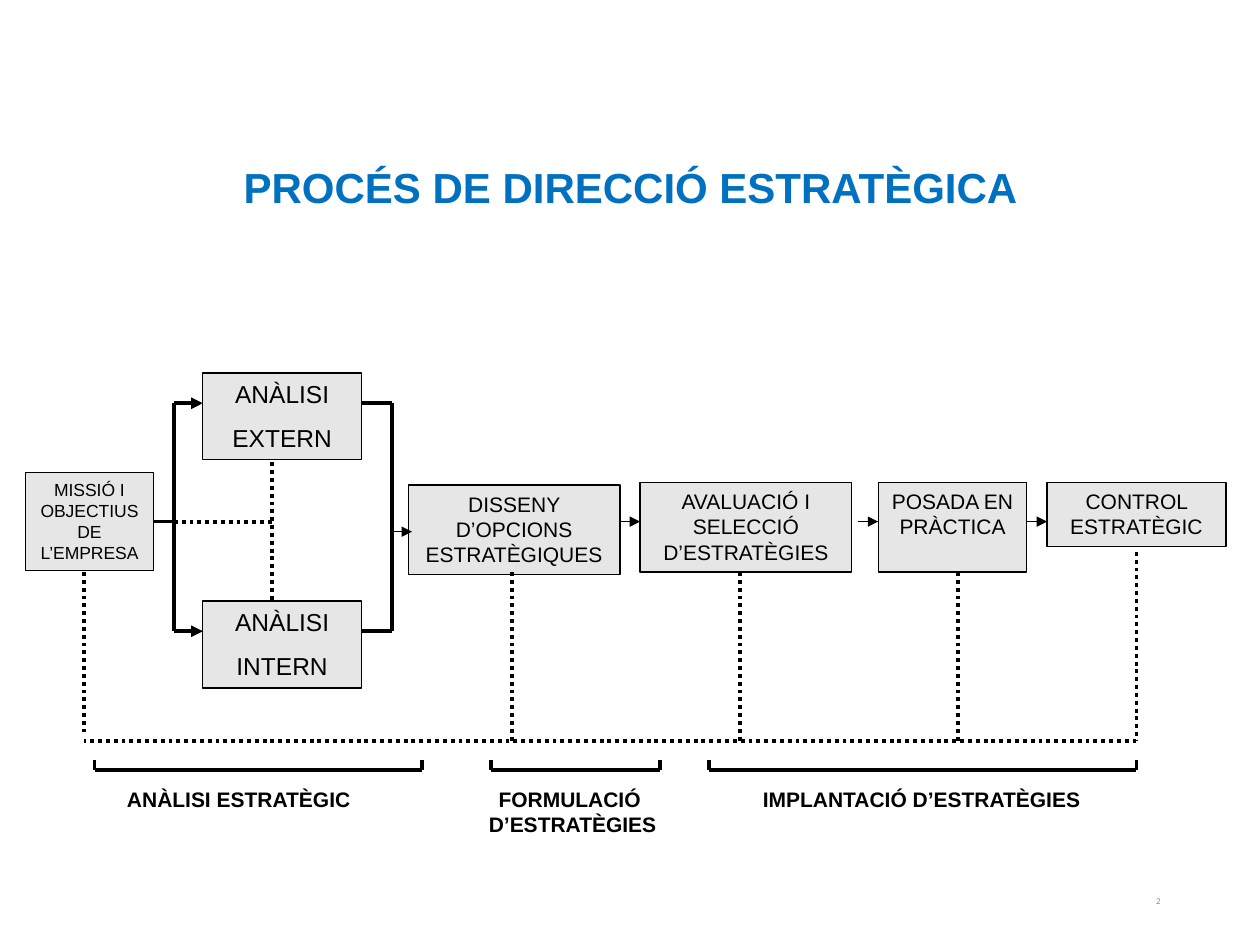
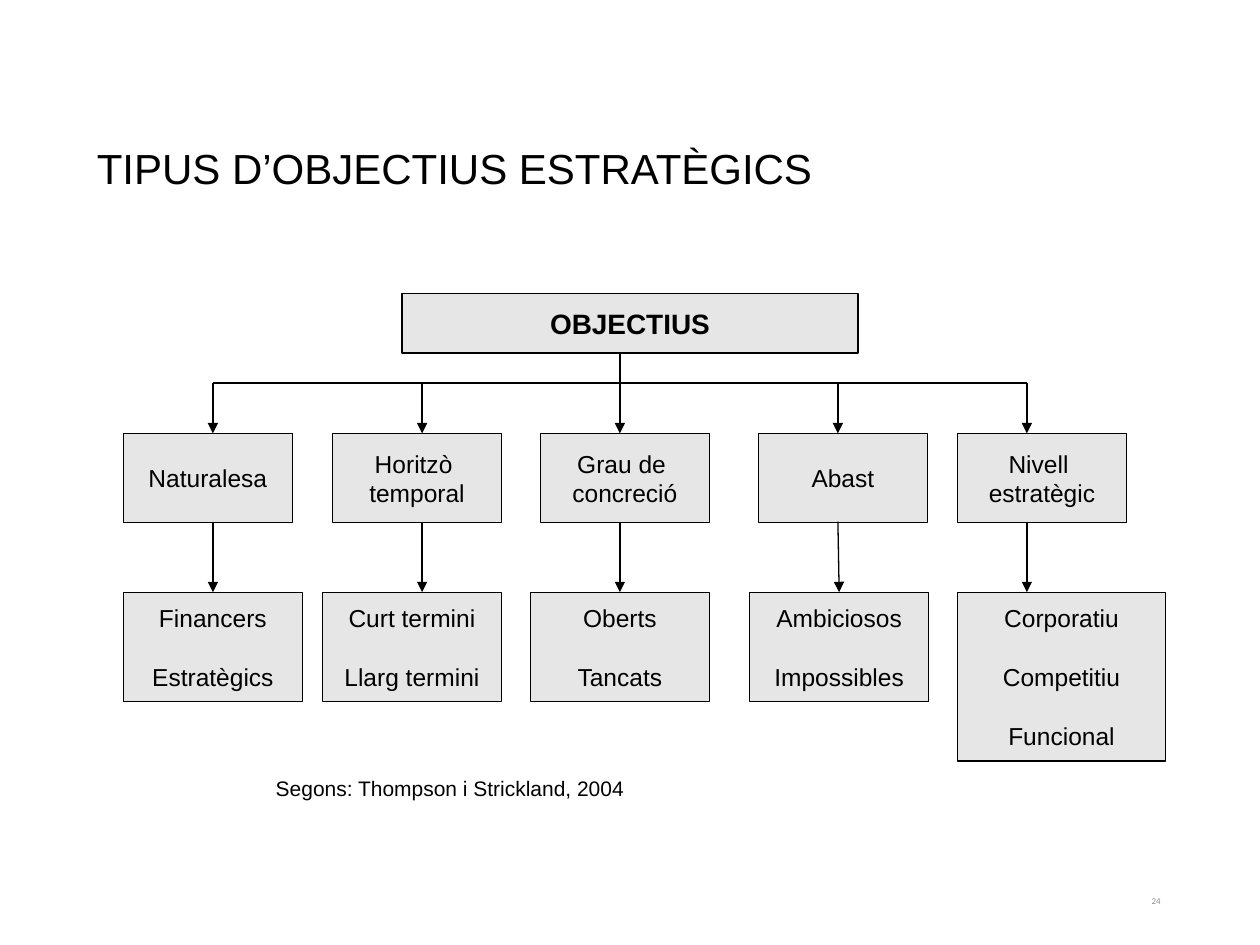
from pptx import Presentation
from pptx import util as u
from pptx.dml.color import RGBColor
from pptx.enum import dml, shapes, text
from pptx.oxml.ns import qn
from lxml import etree

BLACK = RGBColor(0x00, 0x00, 0x00)
BLUE = RGBColor(0x00, 0x70, 0xC0)
GRAY = RGBColor(0x8C, 0x8C, 0x8C)
BOX_FILL = RGBColor(0xE7, 0xE6, 0xE6)
LEFT, CENTER, RIGHT = text.PP_ALIGN.LEFT, text.PP_ALIGN.CENTER, text.PP_ALIGN.RIGHT
TOP, MIDDLE = text.MSO_ANCHOR.TOP, text.MSO_ANCHOR.MIDDLE
BOTTOM_SIDE, RIGHT_SIDE, TOP_SIDE = 2, 3, 0


def add_text(s, at, lines, size, border=None, color=BLACK, bold=False, align=CENTER,
             anchor=TOP, wrap=True, gap=0, font="Arial"):
    """Add a text box, or a filled rectangle when a border width is given."""
    at = [u.Inches(v) for v in at]
    if border is None:
        sp = s.shapes.add_textbox(*at)
    else:
        sp = s.shapes.add_shape(shapes.MSO_SHAPE.RECTANGLE, *at)
        sp.shadow.inherit = False
        sp.fill.solid()
        sp.fill.fore_color.rgb = BOX_FILL
        sp.line.color.rgb = BLACK
        sp.line.width = u.Pt(border)
    tf = sp.text_frame
    tf.text = "\n".join(lines)
    tf.word_wrap = wrap
    tf.vertical_anchor = anchor
    for i, p in enumerate(tf.paragraphs):
        p.alignment = align
        if i and gap:
            p.space_before = u.Pt(gap)
        for r in p.runs:
            r.font.name = font
            r.font.size = u.Pt(size)
            r.font.bold = bold
            r.font.color.rgb = color
    return sp


def add_line(s, x1, y1, x2, y2, width=0.75, dotted=False, arrow=False):
    ends = [u.Inches(v) for v in (x1, y1, x2, y2)]
    c = s.shapes.add_connector(shapes.MSO_CONNECTOR.STRAIGHT, *ends)
    c.line.color.rgb = BLACK
    c.line.width = u.Pt(width)
    if dotted:
        c.line.dash_style = dml.MSO_LINE.ROUND_DOT
    if arrow:
        etree.SubElement(c.line._get_or_add_ln(), qn("a:tailEnd"), type="triangle")
    etree.SubElement(c._element.spPr, qn("a:effectLst"))
    return c


prs = Presentation()
prs.slide_width, prs.slide_height = u.Inches(10), u.Inches(7.5)

# Slides with their title and number
slides = []
for title, x, y, color, bold, align, number in [
    ("PROCÉS DE DIRECCIÓ ESTRATÈGICA", 0.83, 1.23, BLUE, True, CENTER, "2"),
    ("TIPUS D’OBJECTIUS ESTRATÈGICS", 0.67, 1.08, BLACK, False, LEFT, "24"),
]:
    s = prs.slides.add_slide(prs.slide_layouts[6])
    add_text(s, (x, y, 8.35, 0.5), [title], 24, color=color, bold=bold, align=align)
    add_text(s, (7.06, 6.95, 2.25, 0.4), [number], 5.1, color=GRAY, align=RIGHT,
             anchor=MIDDLE, font="Calibri")
    slides.append(s)
process, objectives = slides

# Process: the steps
for y, kind in [(2.96, "EXTERN"), (4.77, "INTERN")]:
    add_text(process, (1.61, y, 1.26, 0.69), ["ANÀLISI", kind], 14, border=0.75, gap=8)
mission = add_text(process, (0.2, 3.75, 1.02, 0.78), ["MISSIÓ I OBJECTIUS DE L’EMPRESA"],
                   10, border=0.75)
for at, lines in [
    ((3.24, 3.85, 1.68, 0.71), ["DISSENY D’OPCIONS", "ESTRATÈGIQUES"]),
    ((5.08, 3.83, 1.68, 0.71), ["AVALUACIÓ I SELECCIÓ D’ESTRATÈGIES"]),
    ((6.97, 3.83, 1.18, 0.71), ["POSADA EN PRÀCTICA"]),
    ((8.31, 3.83, 1.42, 0.51), ["CONTROL ESTRATÈGIC"]),
]:
    add_text(process, at, lines, 12, border=0.75)

# Process: links around the two analyses
FLOW_Y = 4.14
add_line(process, 1.22, FLOW_Y, 1.38, FLOW_Y, 1.5).begin_connect(mission, RIGHT_SIDE)
add_line(process, 1.38, FLOW_Y, 2.16, FLOW_Y, 2.25, dotted=True)
add_line(process, 2.16, 3.67, 2.16, 4.77, 2.25, dotted=True)
for x in (1.38, 3.11):
    add_line(process, x, 3.2, x, 5.01, 2.25)
for y in (3.2, 5.01):
    add_line(process, 1.38, y, 1.61, y, 2.25, arrow=True)
    add_line(process, 2.87, y, 3.11, y, 2.25)

# Process: arrows from step to step
for x, y in [(3.11, 4.22), (4.92, FLOW_Y), (6.81, FLOW_Y), (8.15, FLOW_Y)]:
    add_line(process, x, y, x + 0.16, y, arrow=True)

# Process: dotted feedback loop
FEEDBACK_Y = 5.88
for x, top, bottom in [(0.67, 4.54, 5.81), (4.06, 4.54, FEEDBACK_Y), (5.87, 4.54, FEEDBACK_Y),
                       (7.6, 4.54, FEEDBACK_Y), (9.02, 4.38, FEEDBACK_Y)]:
    add_line(process, x, top, x, bottom, 2.25, dotted=True)
add_line(process, 9.02, FEEDBACK_Y, 0.67, FEEDBACK_Y, 2.25, dotted=True)

# Process: phase brackets and their names
for x1, x2, at, lines, wrap in [
    (0.75, 3.35, (0.9, 6.19, 1.99, 0.3), ["ANÀLISI ESTRATÈGIC"], False),
    (3.9, 5.24, (3.66, 6.19, 1.77, 0.5), ["FORMULACIÓ ", "D’ESTRATÈGIES"], True),
    (5.63, 9.02, (5.94, 6.19, 2.75, 0.3), ["IMPLANTACIÓ D’ESTRATÈGIES"], False),
]:
    add_line(process, x1, 6.11, x2, 6.11, 2.25)
    for x in (x1, x2):
        add_line(process, x, 6.03, x, 6.11, 2.25)
    add_text(process, at, lines, 12, bold=True, wrap=wrap)

# Objectives: root and trunk
add_text(objectives, (3.19, 2.33, 3.62, 0.47), ["OBJECTIUS"], 16, border=1, bold=True,
         anchor=MIDDLE, wrap=False)
add_line(objectives, 1.69, 3.04, 8.15, 3.04)
add_line(objectives, 4.92, 2.81, 4.92, 3.04)

# Objectives: one branch per criterion
for arrow_x, x, criterion, types_x, types_w, types_h, kinds in [
    (1.69, 0.98, ["Naturalesa"], 0.98, 1.42, 0.87, ["Financers", "Estratègics"]),
    (3.35, 2.64, ["Horitzò ", "temporal"], 2.56, 1.42, 0.87, ["Curt termini", "Llarg termini"]),
    (4.92, 4.29, ["Grau de ", "concreció"], 4.21, 1.42, 0.87, ["Oberts", "Tancats"]),
    (6.65, 6.02, ["Abast"], 5.95, 1.42, 0.87, ["Ambiciosos", "Impossibles"]),
    (8.15, 7.6, ["Nivell ", "estratègic"], 7.6, 1.65, 1.34,
     ["Corporatiu", "Competitiu", "Funcional"]),
]:
    add_text(objectives, (x, 3.44, 1.34, 0.71), criterion, 14, border=0.75,
             anchor=MIDDLE, wrap=False)
    sp = add_text(objectives, (types_x, 4.7, types_w, types_h), kinds, 14, border=0.75,
                  anchor=MIDDLE, wrap=False, gap=17)
    add_line(objectives, arrow_x, 3.04, arrow_x, 3.44, arrow=True)
    c = add_line(objectives, arrow_x, 4.14, arrow_x, 4.7, arrow=True)
    if abs(types_x + types_w / 2 - arrow_x) < 0.02:
        c.end_connect(sp, TOP_SIDE)

# Objectives: reference
add_text(objectives, (2.09, 6.11, 4.8, 0.3), ["Segons: Thompson i Strickland, 2004"], 12,
         align=LEFT)

prs.save("out.pptx")
